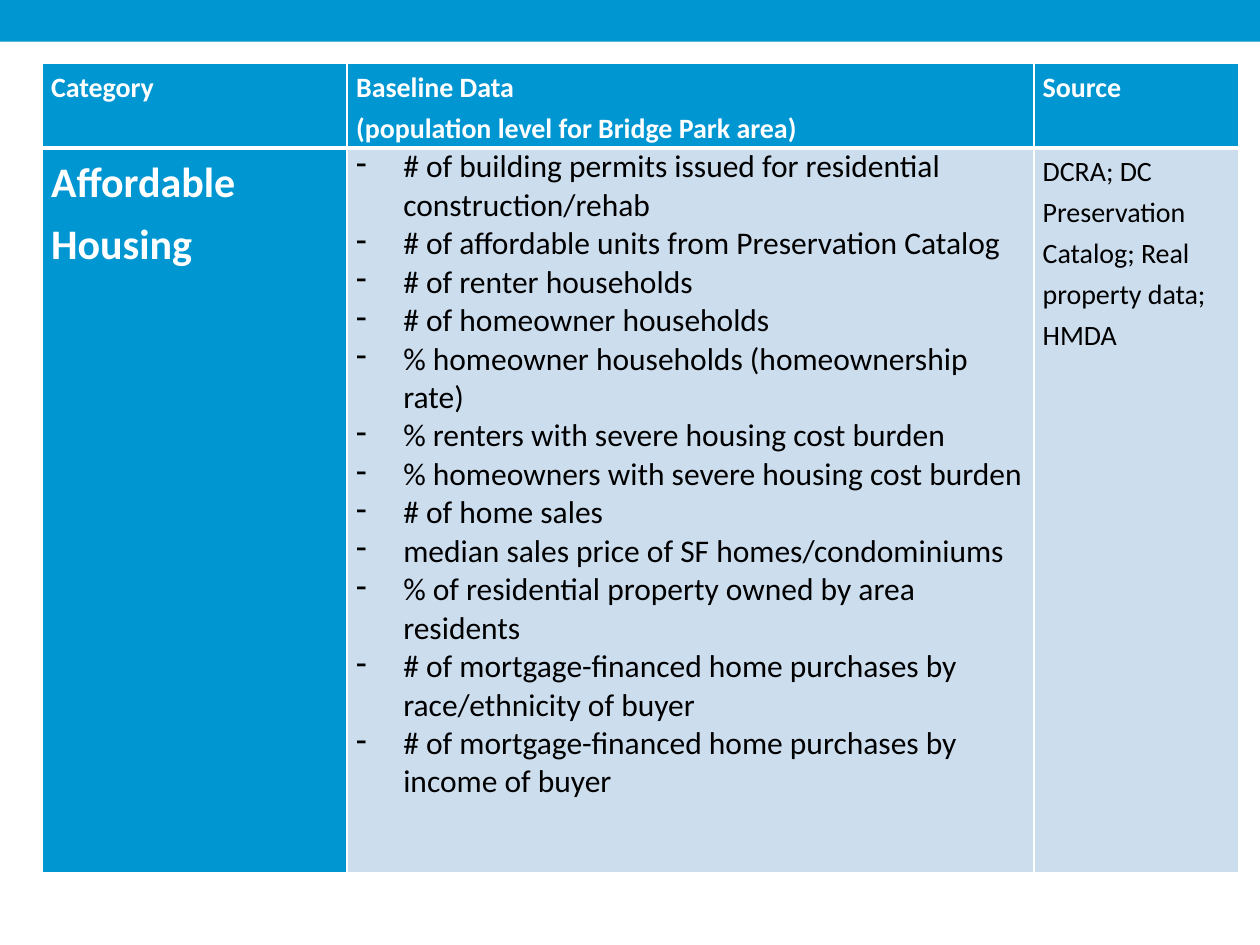
import pptx
import pptx.util
import pptx.dml.color
import pptx.enum.shapes
import pptx.oxml
import pptx.oxml.ns
from lxml import etree

Cm = pptx.util.Cm
Pt = pptx.util.Pt
BLUE = pptx.dml.color.RGBColor(0x00, 0x96, 0xD2)
PALE = pptx.dml.color.RGBColor(0xCC, 0xDD, 0xEE)
WHITE = pptx.dml.color.RGBColor(0xFF, 0xFF, 0xFF)
BLACK = pptx.dml.color.RGBColor(0x00, 0x00, 0x00)

HEADINGS = ["Category", "Baseline Data\v(population level for Bridge Park area)", "Source"]
INDICATORS = [
    "# of building permits issued for residential construction/rehab",
    "# of affordable units from Preservation Catalog",
    "# of renter households",
    "# of homeowner households",
    "% homeowner households (homeownership rate)",
    "% renters with severe housing cost burden",
    "% homeowners with severe housing cost burden",
    "# of home sales",
    "median sales price of SF homes/condominiums",
    "% of residential property owned by area residents",
    "# of mortgage-financed home purchases by race/ethnicity of buyer",
    "# of mortgage-financed home purchases by income of buyer",
]
SOURCES = "DCRA; DC Preservation Catalog; Real property data; HMDA"

HEADING_FONT = {"name": "Calibri", "size": Pt(16), "bold": True}
CATEGORY_FONT = {"name": "Calibri", "size": Pt(24), "bold": True}
INDICATOR_FONT = {"name": "Calibri", "size": Pt(18), "bold": False}
SOURCE_FONT = {"name": "Calibri", "size": Pt(16), "bold": False}
MARGINS = {"margin_left": Cm(0.18), "margin_right": Cm(0.18),
           "margin_top": 0, "margin_bottom": 0}


def add_borders(cell, widths):
    """Draw white cell borders, widths in points by side."""
    properties = cell._tc.get_or_add_tcPr()
    for position, (side, width) in enumerate(widths.items()):
        line = etree.Element(pptx.oxml.ns.qn("a:" + side), w=str(Pt(width)))
        fill = etree.SubElement(line, pptx.oxml.ns.qn("a:solidFill"))
        etree.SubElement(fill, pptx.oxml.ns.qn("a:srgbClr"), val=str(WHITE))
        properties.insert(position, line)


def fill_cell(cell, texts, font, color, background, dashed=False):
    """Write the paragraphs of a cell and format them."""
    for key, value in MARGINS.items():
        setattr(cell, key, value)
    cell.fill.solid()
    cell.fill.fore_color.rgb = background
    cell.text_frame.text = "\n".join(texts)
    for paragraph in cell.text_frame.paragraphs:
        if dashed:
            properties = paragraph._p.get_or_add_pPr()
            properties.set("marL", str(Cm(0.95)))
            properties.set("indent", str(-Cm(0.95)))
            etree.SubElement(properties, pptx.oxml.ns.qn("a:buChar"), char="-")
        else:
            paragraph.line_spacing = 1.2
        for run in paragraph.runs:
            for key, value in font.items():
                setattr(run.font, key, value)
            run.font.color.rgb = color


presentation = pptx.Presentation()
presentation.slide_width = Cm(25.4)
presentation.slide_height = Cm(19.05)
slide = presentation.slides.add_slide(presentation.slide_layouts[6])

# Band along the top edge
band = slide.shapes.add_shape(
    pptx.enum.shapes.MSO_SHAPE.RECTANGLE, 0, 0, presentation.slide_width, Cm(0.84))
band.shadow.inherit = False
band.fill.solid()
band.fill.fore_color.rgb = BLUE
band.line.fill.background()

# Table grid
baseline = slide.shapes.add_table(2, 3, Cm(0.85), Cm(1.28), Cm(24.13), Cm(16.31)).table
baseline.horz_banding = False
for column, width in zip(baseline.columns, (6.15, 13.84, 4.14)):
    column.width = Cm(width)
for row, height in zip(baseline.rows, (1.7, 14.61)):
    row.height = Cm(height)

# Heading row
for index, heading in enumerate(HEADINGS):
    fill_cell(baseline.cell(0, index), [heading], HEADING_FONT, WHITE, BLUE)

# Affordable housing row
fill_cell(baseline.cell(1, 0), ["Affordable Housing"], CATEGORY_FONT, WHITE, BLUE)
fill_cell(baseline.cell(1, 1), INDICATORS, INDICATOR_FONT, BLACK, PALE, dashed=True)
fill_cell(baseline.cell(1, 2), [SOURCES], SOURCE_FONT, BLACK, PALE)

# White rules, heavier below the headings
for index in range(len(HEADINGS)):
    add_borders(baseline.cell(0, index), {"lnL": 1, "lnR": 1, "lnT": 1, "lnB": 3})
    add_borders(baseline.cell(1, index), {"lnL": 1, "lnR": 1, "lnT": 3, "lnB": 1})

presentation.save("out.pptx")
